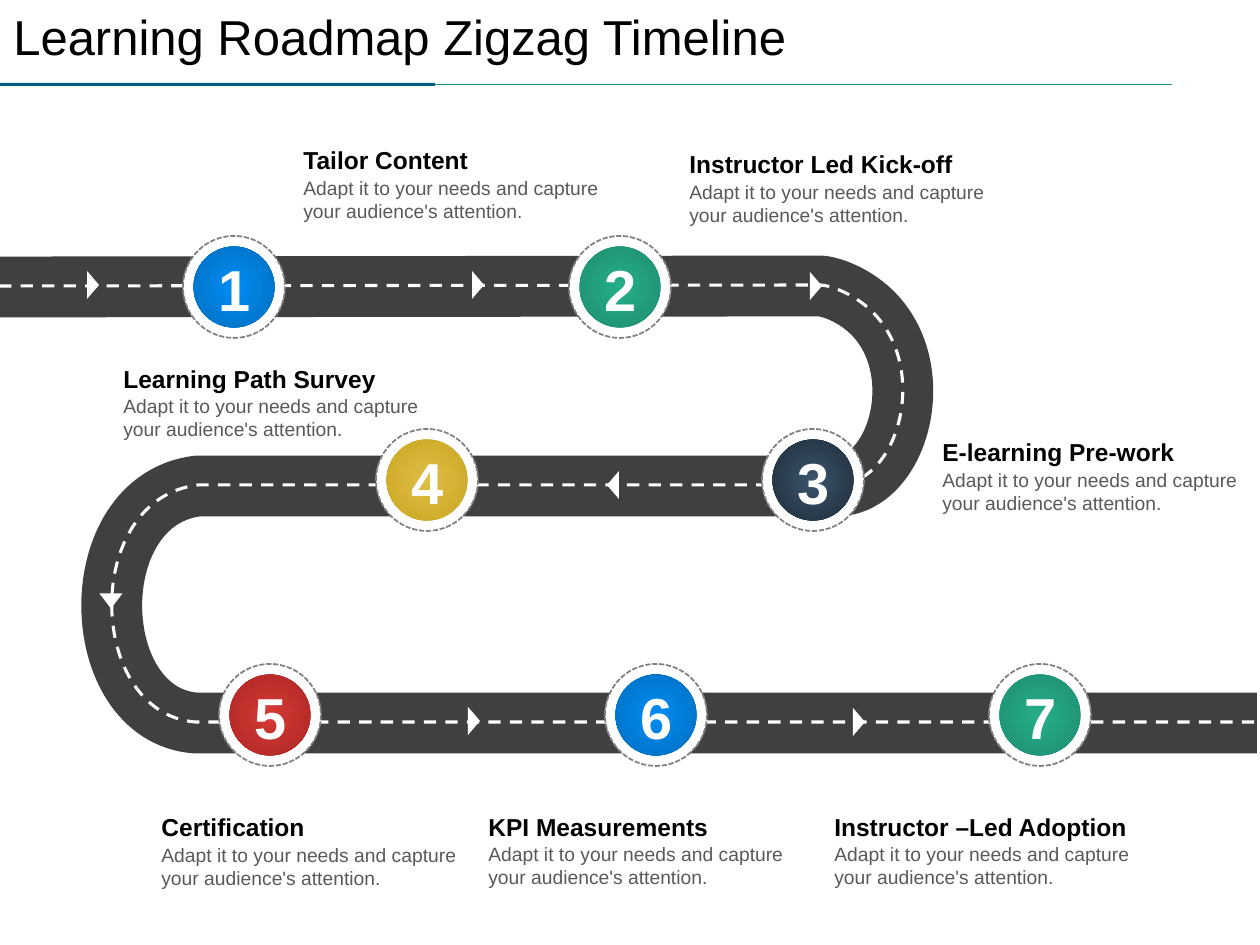
from lxml import etree
from pptx import Presentation
from pptx.dml.color import RGBColor
from pptx.enum.dml import MSO_LINE_DASH_STYLE as Dash
from pptx.enum.shapes import MSO_CONNECTOR as Connector, MSO_SHAPE as Shape
from pptx.enum.text import MSO_ANCHOR as Anchor, MSO_AUTO_SIZE as AutoSize, PP_ALIGN as Align
from pptx.oxml.ns import qn
from pptx.util import Inches, Pt

PX = 914400 // 126
BLACK = RGBColor(0x00, 0x00, 0x00)
WHITE = RGBColor(0xFF, 0xFF, 0xFF)
BODY_GREY = RGBColor(0x59, 0x59, 0x59)
RING_GREY = RGBColor(0x80, 0x80, 0x80)
ASPHALT = RGBColor(0x40, 0x40, 0x40)
NAVY = RGBColor(0x01, 0x5D, 0x82)
TEAL = RGBColor(0x1F, 0x90, 0x72)
BLUE_FADE = (RGBColor(0x00, 0x8D, 0xF6), RGBColor(0x00, 0x70, 0xC0))
GREEN_FADE = (RGBColor(0x25, 0xAD, 0x89), TEAL)
SLATE_FADE = (RGBColor(0x3B, 0x55, 0x6D), RGBColor(0x20, 0x2E, 0x3B))
GOLD_FADE = (RGBColor(0xDF, 0xBE, 0x45), RGBColor(0xCB, 0xA7, 0x23))
RED_FADE = (RGBColor(0xD6, 0x3A, 0x36), RGBColor(0xAE, 0x27, 0x24))

TITLE = "Learning Roadmap Zigzag Timeline"
BODY = "Adapt it to your needs and capture your audience's attention."
LABELS = [  # heading, left, heading top, heading width, body top
    ("Tailor Content", 291, 138, 209, 170),
    ("Instructor Led Kick-off", 677, 142, 323, 174),
    ("Learning Path Survey", 111, 357, 306, 388),
    ("KPI Measurements", 476, 805, 300, 836),
    ("Certification", 149, 805, 185, 837),
    ("E-learning Pre-work", 930, 430, 300, 462),
    ("Instructor –Led Adoption", 822, 805, 328, 836),
]
ROAD_START = (-1, 287)
ROAD = [  # one point is a straight stretch, three points are a cubic bend
    [(820, 286)],
    [(825, 286), (830, 288), (834, 289)],
    [(942, 328), (908, 489), (834, 486)],
    [(198, 486)],
    [(81, 500), (86, 714), (195, 723)],
    [(1257, 723)],
]
ARROWS = [
    (93, 285, 28, 12, 90), (478, 285, 28, 12, 90), (111, 601, 23, 15, 180),
    (613, 485, 28, 12, 270), (816, 286, 28, 12, 90), (474, 721, 28, 12, 90),
    (859, 722, 28, 12, 90),
]
MARKERS = [
    ("1", 234, 287, BLUE_FADE), ("2", 620, 287, GREEN_FADE),
    ("3", 813, 480, SLATE_FADE), ("4", 427, 480, GOLD_FADE),
    ("5", 270, 715, RED_FADE), ("6", 656, 715, BLUE_FADE),
    ("7", 1040, 715, GREEN_FADE),
]
RING, DISC = 102, 81


def add_text(page, text, left, top, width, height, size, color=BLACK, bold=False,
             align=Align.LEFT, wrap=True):
    box = page.shapes.add_textbox(left * PX, top * PX, width * PX, height * PX)
    frame = box.text_frame
    frame.word_wrap = wrap
    frame.auto_size = AutoSize.SHAPE_TO_FIT_TEXT
    frame.vertical_anchor = Anchor.MIDDLE
    para = frame.paragraphs[0]
    para.alignment = align
    span = para.add_run()
    span.text = text
    span.font.name = "Arial"
    span.font.size = Pt(size)
    span.font.bold = bold
    span.font.color.rgb = color


def add_centered(page, kind, x, y, width, height, fill=WHITE):
    shape = page.shapes.add_shape(kind, round((x - width / 2) * PX), round((y - height / 2) * PX),
                                  width * PX, height * PX)
    shape.shadow.inherit = False
    shape.line.fill.background()
    shape.fill.solid()
    shape.fill.fore_color.rgb = fill
    return shape


def fade_from_center(shape, colors):
    shape.fill.gradient()
    for stop, color, position in zip(shape.fill.gradient_stops, colors, (0, 0.93)):
        stop.color.rgb = color
        stop.position = position
    gradient = shape._element.spPr.find(qn("a:gradFill"))
    gradient.remove(gradient.find(qn("a:lin")))
    path = etree.SubElement(gradient, qn("a:path"), {"path": "circle"})
    etree.SubElement(path, qn("a:fillToRect"), {side: "50000" for side in "ltrb"})


def bend_road(road, corners):
    left, top = (min(axis) for axis in zip(*corners))
    stretches = list(road._element.iter(qn("a:lnTo")))
    for stretch, segment in zip(stretches, ROAD):
        if len(segment) == 3:
            bend = etree.Element(qn("a:cubicBezTo"))
            for x, y in segment:
                etree.SubElement(bend, qn("a:pt"), {"x": str(x - left), "y": str(y - top)})
            stretch.getparent().replace(stretch, bend)


def add_road(page, color, width, rise=0, dash=None):
    corners = [ROAD_START] + [segment[-1] for segment in ROAD]
    builder = page.shapes.build_freeform(*ROAD_START, scale=float(PX))
    builder.add_line_segments(corners[1:], close=False)
    road = builder.convert_to_shape()
    bend_road(road, corners)
    road.top -= rise * PX
    road.shadow.inherit = False
    road.fill.background()
    road.line.color.rgb = color
    road.line.width = Pt(width)
    if dash:
        road.line.dash_style = dash


def add_marker(page, number, x, y, colors):
    ring = add_centered(page, Shape.OVAL, x, y, RING, RING)
    ring.line.color.rgb = RING_GREY
    ring.line.width = Pt(1)
    ring.line.dash_style = Dash.SQUARE_DOT
    fade_from_center(add_centered(page, Shape.OVAL, x, y, DISC, DISC), colors)
    add_text(page, number, x - 28, y - 40, 58, 83, 33, color=WHITE, bold=True,
             align=Align.CENTER, wrap=False)


def add_header(page):
    add_text(page, TITLE, 1, 0, 1198, 72, 28)
    rule = page.shapes.add_connector(Connector.STRAIGHT, 344 * PX, 84 * PX, 1172 * PX, 84 * PX)
    rule.line.color.rgb = TEAL
    rule.line.width = Pt(0.5)
    etree.SubElement(rule._element.spPr, qn("a:effectLst"))
    add_centered(page, Shape.RECTANGLE, 217.5, 84.5, 435, 3, NAVY)


def main():
    """Build the zigzag learning roadmap slide."""
    deck = Presentation()
    deck.slide_width, deck.slide_height = Inches(10), Inches(7.5)
    page = deck.slides.add_slide(deck.slide_layouts[6])
    add_header(page)
    for heading, left, top, width, body_top in LABELS:
        add_text(page, heading, left, top, width, 43, 14, bold=True)
        add_text(page, BODY, left, body_top, 328, 59, 11, color=BODY_GREY)
    add_road(page, ASPHALT, 34.75)
    add_road(page, WHITE, 1.75, rise=1, dash=Dash.DASH)
    for x, y, width, height, turn in ARROWS:
        add_centered(page, Shape.ISOSCELES_TRIANGLE, x, y, width, height).rotation = turn
    for marker in MARKERS:
        add_marker(page, *marker)
    deck.save("out.pptx")


if __name__ == "__main__":
    main()
